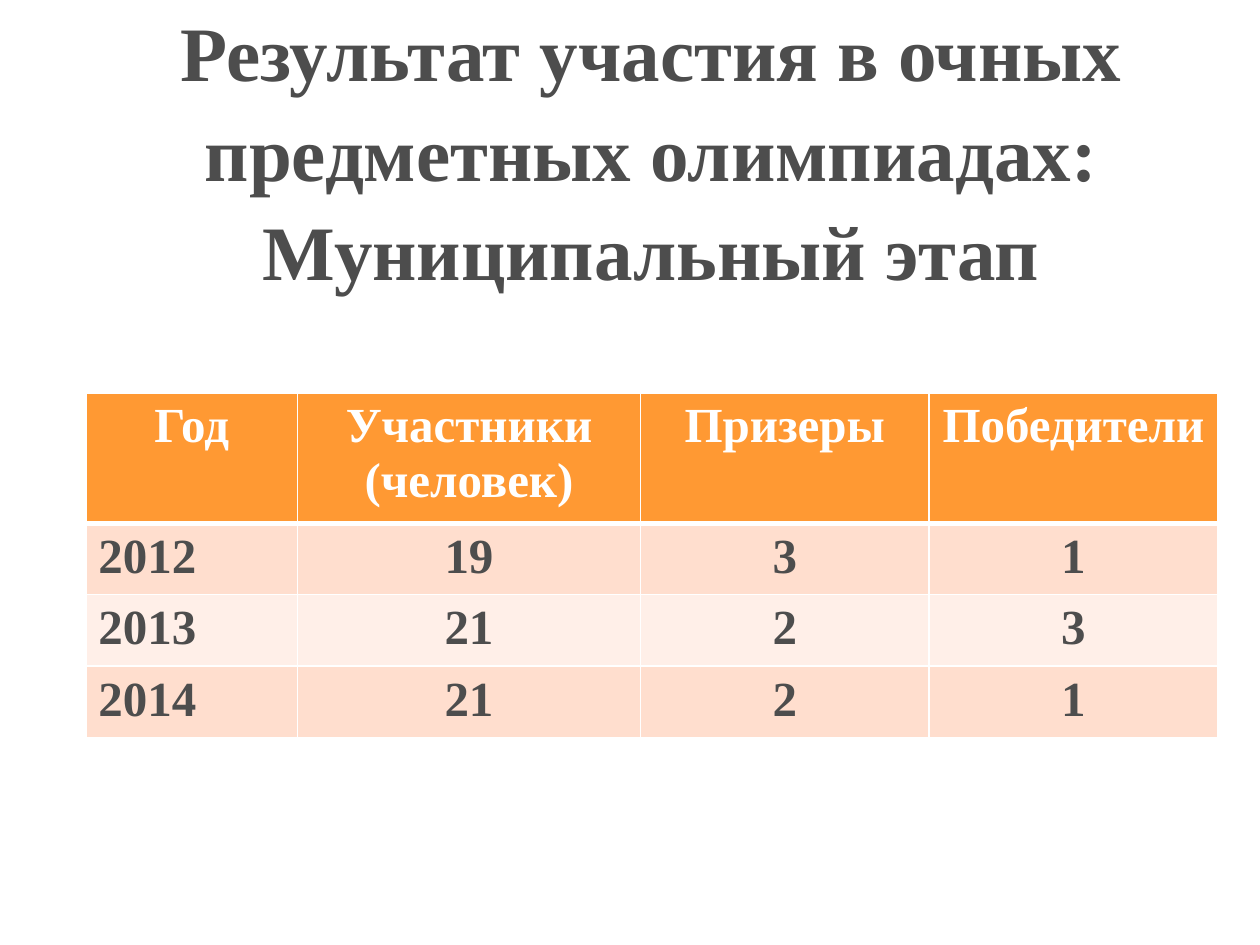
import dataclasses

import pptx
import pptx.dml.color
import pptx.enum.text
import pptx.oxml
import pptx.oxml.ns
import pptx.util

Cm = pptx.util.Cm
Pt = pptx.util.Pt
Align = pptx.enum.text.PP_ALIGN
Anchor = pptx.enum.text.MSO_ANCHOR

FONT = "Times New Roman"
DARK = "4D4D4D"
WHITE = "FFFFFF"
ORANGE = "FF9933"
BANDS = ("FFDECE", "FFEFE8")
COLUMN_WIDTHS = (4.27, 6.91, 5.82, 5.82)
HEADER_HEIGHT = 2.44
ROW_HEIGHT = 1.34


@dataclasses.dataclass
class ResultRow:
    values: tuple[str, ...]
    fill: str
    color: str = DARK
    year_align: Align = Align.LEFT
    height: float = ROW_HEIGHT
    top_border: float = 1
    bottom_border: float = 1


ROWS = [
    ResultRow(("Год", "Участники (человек)", "Призеры", "Победители"), ORANGE, WHITE,
              Align.CENTER, HEADER_HEIGHT, bottom_border=3),
    ResultRow(("2012", "19", "3", "1"), BANDS[0], top_border=3),
    ResultRow(("2013", "21", "2", "3"), BANDS[1]),
    ResultRow(("2014", "21", "2", "1"), BANDS[0]),
]


def rgb(value: str) -> pptx.dml.color.RGBColor:
    return pptx.dml.color.RGBColor.from_string(value)


def write_text(text_frame, text: str, *, size: float, color: str,
               align: Align = Align.CENTER, line_spacing: float = 1.0) -> None:
    text_frame.word_wrap = True
    paragraph = text_frame.paragraphs[0]
    paragraph.alignment = align
    paragraph.line_spacing = line_spacing
    for index, line in enumerate(text.split("\n")):
        if index:
            paragraph.add_line_break()
        run = paragraph.add_run()
        run.text = line
        run.font.name = FONT
        run.font.size = Pt(size)
        run.font.bold = True
        run.font.color.rgb = rgb(color)


def set_borders(cell, widths: dict[str, float]) -> None:
    properties = cell._tc.get_or_add_tcPr()
    for side, width in widths.items():
        properties.append(pptx.oxml.parse_xml(
            f'<a:{side} {pptx.oxml.ns.nsdecls("a")} w="{Pt(width)}">'
            f'<a:solidFill><a:srgbClr val="{WHITE}"/></a:solidFill></a:{side}>'))


def add_title(slide, text: str) -> None:
    title = slide.shapes.add_textbox(Cm(2.97), Cm(0.79), Cm(20.32), Cm(4.34))
    title.text_frame.vertical_anchor = Anchor.MIDDLE
    write_text(title.text_frame, text, size=44, color=DARK, line_spacing=1.08)


def add_results(slide, rows: list[ResultRow]) -> None:
    table = slide.shapes.add_table(
        len(rows), len(COLUMN_WIDTHS), Cm(1.73), Cm(7.92),
        Cm(sum(COLUMN_WIDTHS)), Cm(sum(row.height for row in rows))).table
    for column, width in zip(table.columns, COLUMN_WIDTHS):
        column.width = Cm(width)
    for row_index, row in enumerate(rows):
        table.rows[row_index].height = Cm(row.height)
        for column_index, value in enumerate(row.values):
            cell = table.cell(row_index, column_index)
            set_borders(cell, {"lnL": 1, "lnR": 1, "lnT": row.top_border,
                               "lnB": row.bottom_border})
            cell.fill.solid()
            cell.fill.fore_color.rgb = rgb(row.fill)
            align = Align.CENTER if column_index else row.year_align
            write_text(cell.text_frame, value, size=28, color=row.color, align=align)


def main() -> None:
    presentation = pptx.Presentation()
    presentation.slide_width = Cm(25.4)
    presentation.slide_height = Cm(19.05)
    slide = presentation.slides.add_slide(presentation.slide_layouts[6])
    add_title(slide, "Результат участия в очных предметных олимпиадах:\nМуниципальный этап")
    add_results(slide, ROWS)
    presentation.save("out.pptx")


if __name__ == "__main__":
    main()
